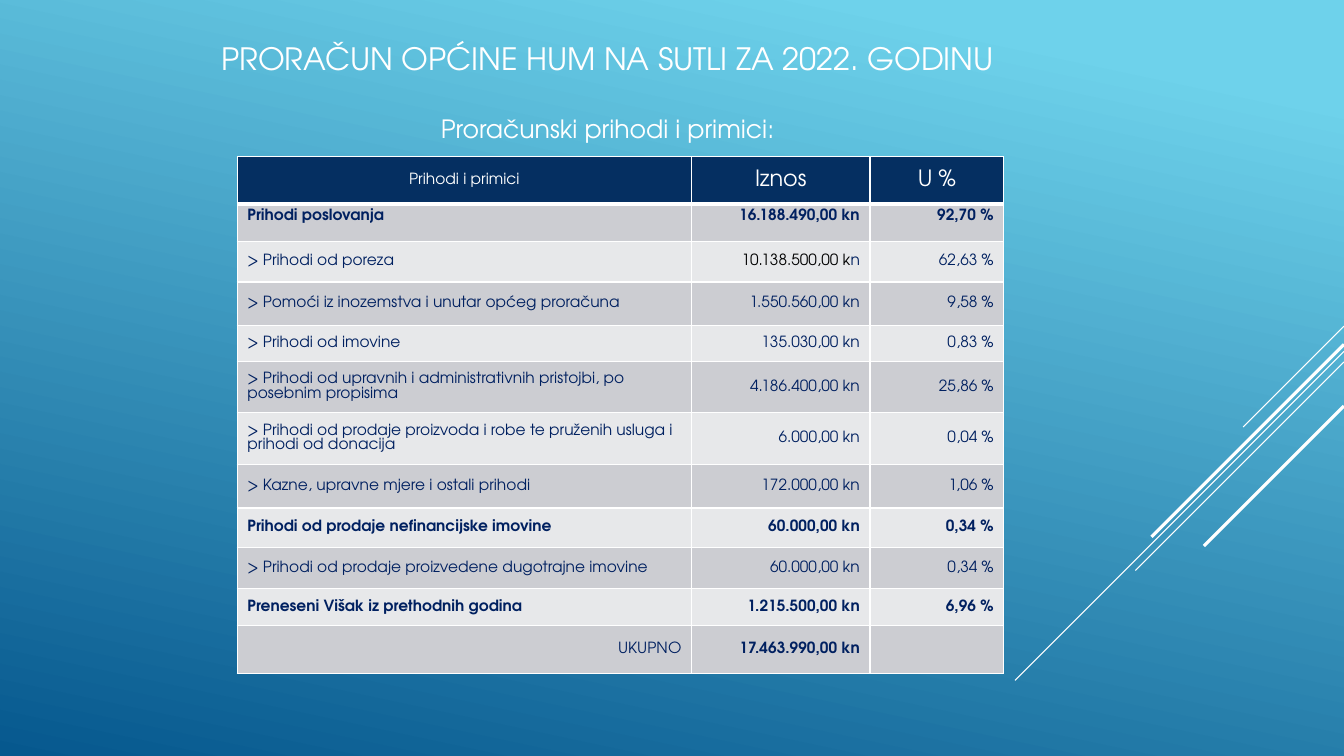
from lxml.etree import SubElement
from pptx import Presentation
from pptx.dml.color import RGBColor
from pptx.enum.shapes import MSO_CONNECTOR
from pptx.enum.text import MSO_ANCHOR, PP_ALIGN
from pptx.oxml import parse_xml
from pptx.oxml.ns import nsdecls, qn
from pptx.util import Pt

COLORS = {"white": "FFFFFF", "black": "000000", "navy": "002060", "header": "052F61",
          "dark_band": "CCCDD2", "light_band": "E7E8EA", "sky": "6ED2EB", "deep": "06588E"}
FONT = "TeX Gyre Adventor"
PAGE_WIDTH, PAGE_HEIGHT = 960, 540
COLUMN_WIDTHS = [324.5, 127.5, 95.5]
ROW_HEIGHTS = [33.5, 27, 29, 31, 26, 36, 37.5, 31, 28, 29.5, 26.5, 34]
HEADINGS = [("Prihodi i primici", 11), ("Iznos", 16), ("U %", 16)]
REVENUES = [
    ("Prihodi poslovanja", "16.188.490,00 kn", "92,70 %"),
    ("> Prihodi od poreza", "10.138.500,00 kn", "62,63 %"),
    ("> Pomoći iz inozemstva i unutar općeg proračuna", "1.550.560,00 kn", "9,58 %"),
    ("> Prihodi od imovine", "135.030,00 kn", "0,83 %"),
    ("> Prihodi od upravnih i administrativnih pristojbi, po posebnim propisima",
     "4.186.400,00 kn", "25,86 %"),
    ("> Prihodi od prodaje proizvoda i robe te pruženih usluga i prihodi od donacija",
     "6.000,00 kn", "0,04 %"),
    ("> Kazne, upravne mjere i ostali prihodi", "172.000,00 kn", "1,06 %"),
    ("Prihodi od prodaje nefinancijske imovine", "60.000,00 kn", "0,34 %"),
    ("> Prihodi od prodaje proizvedene dugotrajne imovine", "60.000,00 kn", "0,34 %"),
    ("Preneseni Višak iz prethodnih godina", "1.215.500,00 kn", "6,96 %"),
    ("UKUPNO", "17.463.990,00 kn", ""),
]
RAYS = [(233, 72, 0.75), (251, 235, 0.75), (258.5, 149, 0.75),
        (246, 137.5, 2.25), (290, 100, 2.25)]


def color(name):
    """Return the named palette colour."""
    return RGBColor.from_string(COLORS[name])


def add_span(para, text, size, tint, bold=False):
    """Append one formatted run to a paragraph."""
    span = para.add_run()
    span.text = text
    span.font.name = FONT
    span.font.size = Pt(size)
    span.font.bold = bold
    span.font.color.rgb = color(tint)


def paint_background(page):
    """Fill the page with the diagonal blue gradient."""
    fill = page.background.fill
    fill.gradient()
    fill.gradient_angle = 258
    for stop, position, name in zip(fill.gradient_stops, (0.1, 1), ("sky", "deep")):
        stop.position = position
        stop.color.rgb = color(name)


def add_rays(page, right):
    """Draw the 45 degree lines that run down from the right edge."""
    for top, reach, width in RAYS:
        ray = page.shapes.add_connector(MSO_CONNECTOR.STRAIGHT, Pt(right), Pt(top),
                                        Pt(right - reach), Pt(top + reach))
        ray.line.color.rgb = color("white")
        ray.line.width = Pt(width)
        SubElement(ray._element.spPr, qn("a:effectLst"))


def add_title(page, left, top, width, height):
    """Place the title and the subtitle centred in the given box."""
    box = page.shapes.add_textbox(Pt(left), Pt(top), Pt(width), Pt(height))
    frame = box.text_frame
    frame.word_wrap = True
    frame.vertical_anchor = MSO_ANCHOR.MIDDLE
    title, subtitle = frame.paragraphs[0], frame.add_paragraph()
    for para in (title, subtitle):
        para.alignment = PP_ALIGN.CENTER
        para.line_spacing = 0.9
    subtitle.space_before = Pt(28.5)
    add_span(title, "PRORAČUN OPĆINE HUM NA SUTLI ZA 2022. GODINU", 22, "white")
    add_span(subtitle, "Proračunski prihodi i primici:", 18, "white")


def style_cell(cell, fill, widths, anchor=MSO_ANCHOR.MIDDLE):
    """Set the fill, anchor and white borders of a cell."""
    cell.fill.solid()
    cell.fill.fore_color.rgb = color(fill)
    cell.vertical_anchor = anchor
    properties = cell._tc.get_or_add_tcPr()
    for index, (side, width) in enumerate(zip("LRTB", widths)):
        properties.insert(index, parse_xml(
            f'<a:ln{side} {nsdecls("a")} w="{Pt(width)}"><a:solidFill>'
            f'<a:srgbClr val="{COLORS["white"]}"/></a:solidFill></a:ln{side}>'))


def fill_header(table):
    """Write the heading row."""
    for column, (text, size) in enumerate(HEADINGS):
        cell = table.cell(0, column)
        style_cell(cell, "header", (1, 1, 1, 3))
        para = cell.text_frame.paragraphs[0]
        para.alignment = PP_ALIGN.CENTER
        add_span(para, text, size, "white")


def fill_revenue(table, row, texts):
    """Write one revenue row, bold for main groups."""
    label = texts[0]
    total = label == "UKUPNO"
    group = not label.startswith(">")
    for column, text in enumerate(texts):
        cell = table.cell(row, column)
        style_cell(cell, "dark_band" if row % 2 else "light_band",
                   (1, 1, 3 if row == 1 else 1, 1),
                   MSO_ANCHOR.TOP if row == 1 else MSO_ANCHOR.MIDDLE)
        para = cell.text_frame.paragraphs[0]
        para.alignment = PP_ALIGN.RIGHT if column or total else PP_ALIGN.LEFT
        bold = group and not (total and column == 0)
        if label == "> Prihodi od poreza" and column == 1:
            add_span(para, text[:-1], 11, "black", bold)
            add_span(para, text[-1], 11, "navy", bold)
        elif text:
            add_span(para, text, 11, "navy", bold)


def add_budget_table(page, left, top):
    """Build the revenue table from its top left corner."""
    table = page.shapes.add_table(len(ROW_HEIGHTS), len(COLUMN_WIDTHS), Pt(left), Pt(top),
                                  Pt(sum(COLUMN_WIDTHS)), Pt(sum(ROW_HEIGHTS))).table
    for column, width in zip(table.columns, COLUMN_WIDTHS):
        column.width = Pt(width)
    for row, height in zip(table.rows, ROW_HEIGHTS):
        row.height = Pt(height)
    fill_header(table)
    for row, texts in enumerate(REVENUES, 1):
        fill_revenue(table, row, texts)


def main():
    """Build and save the budget slide."""
    deck = Presentation()
    deck.slide_width, deck.slide_height = Pt(PAGE_WIDTH), Pt(PAGE_HEIGHT)
    page = deck.slides.add_slide(deck.slide_layouts[6])
    paint_background(page)
    add_rays(page, PAGE_WIDTH)
    add_title(page, 53, 13, 762, 108)
    add_budget_table(page, 169.5, 112)
    deck.save("out.pptx")


if __name__ == "__main__":
    main()
